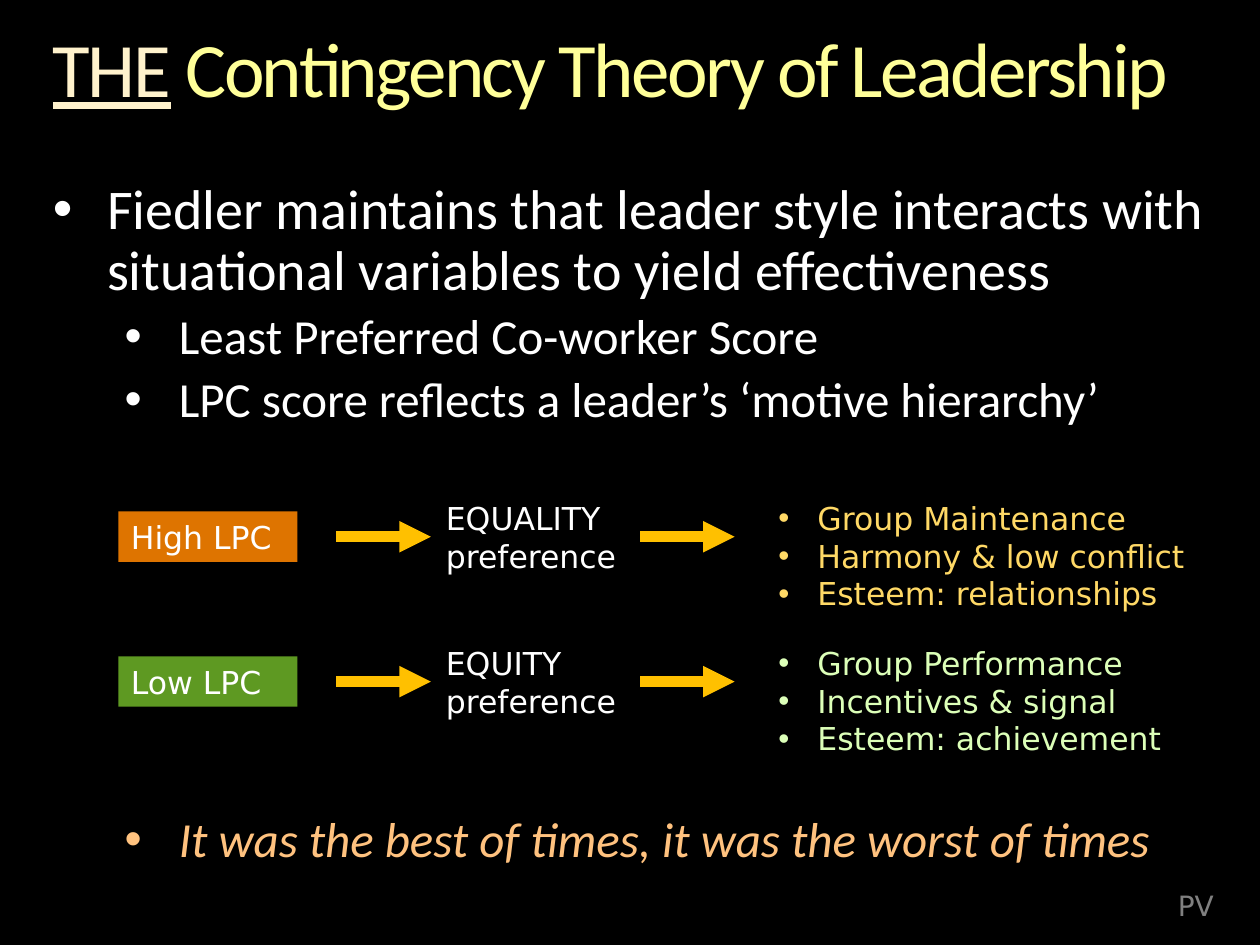
from lxml import etree
from pptx import Presentation
from pptx.dml.color import RGBColor
from pptx.enum import shapes, text
from pptx.oxml.ns import qn
from pptx.util import Inches, Pt

HEADING_FONT = "Calibri"
DIAGRAM_FONT = "DejaVu Sans"
WHITE = "FFFFFF"
ROW_TOP, ROW_PITCH = 3.91, 1.15


def color(value):
    return RGBColor.from_string(value)


def style(font, name, size, value, italic=None):
    font.name, font.size, font.italic = name, Pt(size), italic
    font.color.rgb = color(value)


def add_frame(slide, left, top, width, height, inset=True):
    frame = slide.shapes.add_textbox(
        Inches(left), Inches(top), Inches(width), Inches(height)).text_frame
    frame.word_wrap = True
    if not inset:
        frame.margin_left = frame.margin_right = 0
        frame.margin_top = frame.margin_bottom = 0
    return frame


def next_paragraph(frame):
    """Return the empty first paragraph, or a new one after it."""
    first = frame.paragraphs[0]
    return frame.add_paragraph() if first.runs else first


def add_bullet(frame, wording, indent, hanging):
    paragraph = next_paragraph(frame)
    properties = paragraph._p.get_or_add_pPr()
    properties.set("marL", str(Inches(indent)))
    properties.set("indent", str(-Inches(hanging)))
    etree.SubElement(properties, qn("a:buFont")).set("typeface", "Arial")
    etree.SubElement(properties, qn("a:buChar")).set("char", "•")
    paragraph.add_run().text = wording
    return paragraph


def add_title(slide, left, top, width, height):
    frame = add_frame(slide, left, top, width, height, inset=False)
    paragraph = frame.paragraphs[0]
    paragraph.line_spacing = 0.9
    for wording, value, underline in (
            ("THE", "FFF2CC", True),
            (" Contingency Theory of Leadership", "FFFF99", False)):
        run = paragraph.add_run()
        run.text = wording
        style(run.font, HEADING_FONT, 44, value)
        run.font.underline = underline
        run._r.get_or_add_rPr().set("spc", "-150")


def add_outline(slide, left, top, width, height, points):
    """Place (wording, indent, size, colour, italic) points as bullets."""
    frame = add_frame(slide, left, top, width, height, inset=False)
    for index, (wording, indent, size, value, italic) in enumerate(points):
        paragraph = add_bullet(frame, wording, indent, 0.43)
        paragraph.line_spacing = 0.9
        if index:
            paragraph.space_before = Pt(size * 0.2)
        style(paragraph.font, HEADING_FONT, size, value, italic)


def add_label(slide, left, top, wording, fill):
    label = slide.shapes.add_shape(
        shapes.MSO_SHAPE.RECTANGLE,
        Inches(left), Inches(top), Inches(1.42), Inches(0.4))
    label.shadow.inherit = False
    label.fill.solid()
    label.fill.fore_color.rgb = color(fill)
    label.line.fill.background()
    paragraph = label.text_frame.paragraphs[0]
    paragraph.text = wording
    paragraph.alignment = text.PP_ALIGN.LEFT
    style(paragraph.font, DIAGRAM_FONT, 18, WHITE)


def add_arrow(slide, left, middle):
    arrow = slide.shapes.add_connector(
        shapes.MSO_CONNECTOR.STRAIGHT,
        Inches(left), Inches(middle), Inches(left + 0.75), Inches(middle))
    arrow.line.color.rgb = color("FFC000")
    arrow.line.width = Pt(6)
    etree.SubElement(arrow.line._get_or_add_ln(), qn("a:tailEnd")).set("type", "triangle")
    etree.SubElement(arrow._element.spPr, qn("a:effectLst"))


def add_text(slide, left, top, width, height, wording, size, value):
    paragraph = add_frame(slide, left, top, width, height).paragraphs[0]
    paragraph.text = wording
    style(paragraph.font, DIAGRAM_FONT, size, value)


def add_lpc_row(slide, left, top, label, fill, preference, outcomes, value):
    """Lay out label, arrow, preference, arrow and outcomes from left to right."""
    add_label(slide, left, top + 0.15, label, fill)
    for offset in (1.73, 4.14):
        add_arrow(slide, left + offset, top + 0.35)
    add_text(slide, left + 2.5, top, 1.75, 0.71, preference, 18, WHITE)
    frame = add_frame(slide, left + 5.14, top, 3.5, 1.01)
    for outcome in outcomes:
        style(add_bullet(frame, outcome, 0.31, 0.31).font, DIAGRAM_FONT, 18, value)


def main():
    deck = Presentation()
    deck.slide_width, deck.slide_height = Inches(10), Inches(7.5)
    slide = deck.slides.add_slide(deck.slide_layouts[6])
    slide.background.fill.solid()
    slide.background.fill.fore_color.rgb = color("000000")

    add_text(slide, 9.25, 7, 0.58, 0.37, "PV", 16, "808080")
    add_title(slide, 0.42, 0.25, 9.17, 0.67)
    add_outline(slide, 0.42, 1.44, 9.17, 2.1, [
        ("Fiedler maintains that leader style interacts with situational "
         "variables to yield effectiveness", 0.43, 32, WHITE, False),
        ("Least Preferred Co-worker Score", 1, 28, WHITE, False),
        ("LPC score reflects a leader’s ‘motive hierarchy’", 1, 28, WHITE, False),
    ])
    rows = [
        ("High LPC", "DE7400", "EQUALITY preference",
         ["Group Maintenance", "Harmony & low conflict", "Esteem: relationships"],
         "FFD966"),
        ("Low LPC", "5E9922", "EQUITY preference",
         ["Group Performance", "Incentives & signal", "Esteem: achievement"],
         "DCFFB8"),
    ]
    for index, row in enumerate(rows):
        add_lpc_row(slide, 0.94, ROW_TOP + index * ROW_PITCH, *row)
    add_outline(slide, 0.42, 6.47, 9.17, 0.45, [
        ("It was the best of times, it was the worst of times", 1, 28, "FFC27F", True),
    ])
    deck.save("out.pptx")


if __name__ == "__main__":
    main()
